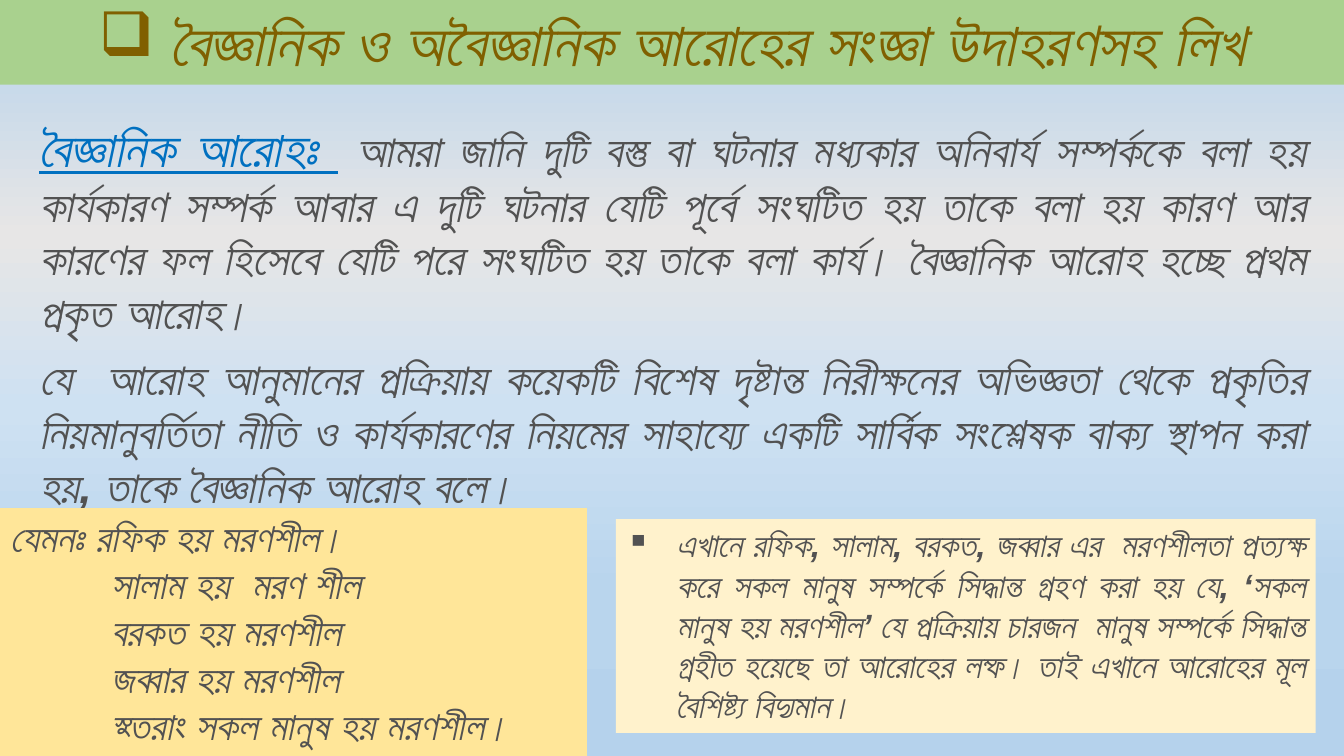
from dataclasses import dataclass
from typing import Optional

import pptx
import pptx.dml.color
import pptx.enum.shapes
import pptx.enum.text
import pptx.oxml.ns
import pptx.oxml.xmlchemy
import pptx.util

Inches = pptx.util.Inches
RGBColor = pptx.dml.color.RGBColor
Align = pptx.enum.text.PP_ALIGN
OxmlElement = pptx.oxml.xmlchemy.OxmlElement
qn = pptx.oxml.ns.qn

GREEN = RGBColor(0xA9, 0xD1, 0x8E)
AMBER = RGBColor(0xFF, 0xE6, 0x99)
CREAM = RGBColor(0xFF, 0xF2, 0xCC)
BROWN = RGBColor(0x80, 0x60, 0x00)
BLUE = RGBColor(0x00, 0x70, 0xC0)
GREY = RGBColor(0x52, 0x52, 0x52)
SKY = RGBColor(0xB5, 0xD2, 0xEC)
SKY_STOPS = [
    (0, SKY),
    (31, RGBColor(0xE7, 0xE6, 0xE6)),
    (54, RGBColor(0xCE, 0xE1, 0xF2)),
    (78, RGBColor(0xB9, 0xD5, 0xED)),
    (99, SKY),
]


@dataclass
class Line:
    text: str
    size: int
    color: RGBColor = GREY
    lead: str = ""  # underlined opening words
    align: Align = Align.JUSTIFY
    margin: float = 0
    hang: float = 0
    bullet: str = ""


@dataclass
class Block:
    left: float
    top: float
    width: float
    height: float
    lines: list[Line]
    fill: Optional[RGBColor] = None


def add_text(paragraph, text: str, *, size: int, color: RGBColor,
             underline: bool = False) -> None:
    run = paragraph.add_run()
    run.text = text
    font = run.font
    font.name = "Arial"
    font.size = pptx.util.Pt(size)
    font.bold = font.italic = True
    font.underline = underline
    font.color.rgb = color
    # Bengali takes its typeface from the complex-script setting
    complex_script = OxmlElement("a:cs")
    complex_script.set("typeface", "Arial")
    run._r.get_or_add_rPr().append(complex_script)


def write_line(paragraph, line: Line) -> None:
    paragraph.alignment = line.align
    properties = paragraph._p.get_or_add_pPr()
    properties.set("marL", str(int(Inches(line.margin))))
    properties.set("indent", str(int(Inches(-line.hang))))
    if line.bullet:
        mark = OxmlElement("a:buChar")
        mark.set("char", line.bullet)
        properties.append(mark)
    if line.lead:
        add_text(paragraph, line.lead, size=36, color=BLUE, underline=True)
    add_text(paragraph, line.text, size=line.size, color=line.color)


def draw_block(slide, block: Block) -> None:
    place = [Inches(v) for v in (block.left, block.top, block.width, block.height)]
    if block.fill is None:
        shape = slide.shapes.add_textbox(*place)
    else:
        shape = slide.shapes.add_shape(
            pptx.enum.shapes.MSO_SHAPE.RECTANGLE, *place)
        shape.shadow.inherit = False
        shape.fill.solid()
        shape.fill.fore_color.rgb = block.fill
        shape.line.fill.background()
    frame = shape.text_frame
    frame.word_wrap = True
    frame.auto_size = pptx.enum.text.MSO_AUTO_SIZE.SHAPE_TO_FIT_TEXT
    frame.vertical_anchor = pptx.enum.text.MSO_ANCHOR.TOP
    for number, line in enumerate(block.lines):
        write_line(frame.add_paragraph() if number else frame.paragraphs[0], line)


def paint_background(slide) -> None:
    fill = slide.background.fill
    fill.gradient()
    fill.gradient_angle = 270
    stops = slide.element.find(".//" + qn("a:gsLst"))
    for stop in list(stops):
        stops.remove(stop)
    for percent, color in SKY_STOPS:
        stop = OxmlElement("a:gs")
        stop.set("pos", str(percent * 1000))
        value = OxmlElement("a:srgbClr")
        value.set("val", str(color))
        stop.append(value)
        stops.append(stop)


TITLE = Line(" বৈজ্ঞানিক ও অবৈজ্ঞানিক আরোহের সংজ্ঞা উদাহরণসহ লিখ", 44, BROWN,
             align=Align.CENTER, margin=0.31, hang=0.31, bullet="❑")
CAUSE = Line(
    " আমরা জানি দুটি বস্তু বা ঘটনার মধ্যকার অনিবার্য সম্পর্ককে বলা হয় "
    "কার্যকারণ সম্পর্ক আবার এ দুটি ঘটনার যেটি পূর্বে সংঘটিত হয় তাকে বলা হয় কারণ আর "
    "কারণের ফল হিসেবে যেটি পরে সংঘটিত হয় তাকে বলা কার্য। বৈজ্ঞানিক আরোহ হচ্ছে প্রথম "
    "প্রকৃত আরোহ।", 32, lead="বৈজ্ঞানিক আরোহঃ ")
DEFINITION = Line(
    "যে  আরোহ আনুমানের প্রক্রিয়ায় কয়েকটি বিশেষ দৃষ্টান্ত নিরীক্ষনের অভিজ্ঞতা থেকে প্রকৃতির "
    "নিয়মানুবর্তিতা নীতি ও কার্যকারণের নিয়মের সাহায্যে একটি সার্বিক সংশ্লেষক বাক্য স্থাপন করা "
    "হয়, তাকে বৈজ্ঞানিক আরোহ বলে।", 32)
EXAMPLE = [Line("যেমনঃ রফিক হয় মরণশীল।", 28)] + [
    Line(text, 28, margin=1) for text in (
        "সালাম হয়  মরণ শীল",
        "বরকত হয় মরণশীল",
        "জব্বার হয় মরণশীল",
        "সুতরাং সকল মানুষ হয় মরণশীল।",
    )]
EXPLANATION = Line(
    "এখানে রফিক, সালাম, বরকত, জব্বার এর  মরণশীলতা প্রত্যক্ষ "
    "করে সকল মানুষ সম্পর্কে সিদ্ধান্ত গ্রহণ করা হয় যে, ‘সকল "
    "মানুষ হয় মরণশীল’ যে প্রক্রিয়ায় চারজন  মানুষ সম্পর্কে সিদ্ধান্ত "
    "গ্রহীত হয়েছে তা আরোহের লম্ফ। তাই এখানে আরোহের মূল "
    "বৈশিষ্ট্য বিদ্যমান।", 24, margin=0.5, hang=0.5, bullet="▪")

BLOCKS = [
    Block(0, 0, 13.33, 0.84, [TITLE], GREEN),
    Block(0.29, 1.11, 12.76, 2.32, [CAUSE]),
    Block(0.29, 3.43, 12.76, 1.72, [DEFINITION]),
    Block(0, 5.04, 5.82, 2.46, EXAMPLE, AMBER),
    Block(6.11, 5.15, 6.94, 2.12, [EXPLANATION], CREAM),
]


def main() -> None:
    deck = pptx.Presentation()
    deck.slide_width, deck.slide_height = Inches(13.33), Inches(7.5)
    slide = deck.slides.add_slide(deck.slide_layouts[6])
    paint_background(slide)
    for block in BLOCKS:
        draw_block(slide, block)
    deck.save("out.pptx")


if __name__ == "__main__":
    main()
